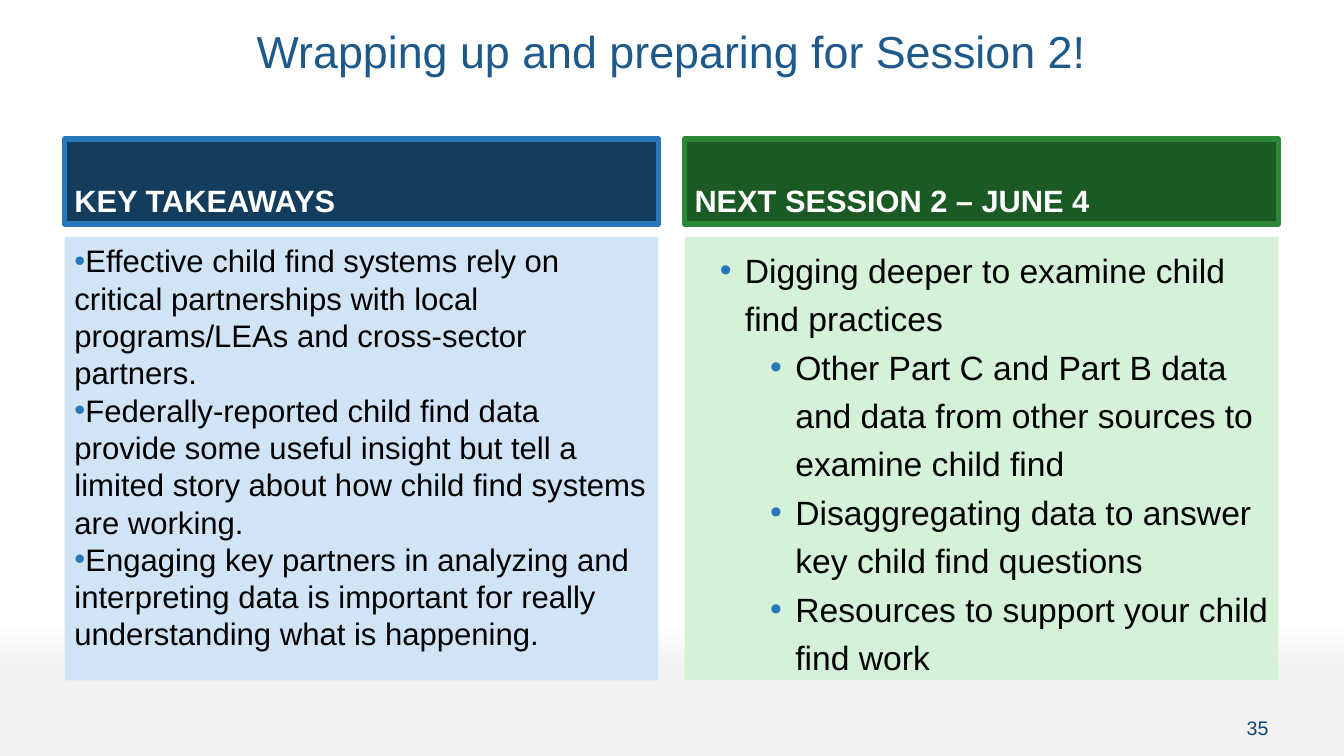
from dataclasses import dataclass

from lxml import etree
from pptx import Presentation
from pptx.dml.color import RGBColor
from pptx.enum.shapes import MSO_SHAPE
from pptx.enum.text import MSO_ANCHOR, PP_ALIGN
from pptx.oxml.ns import qn
from pptx.util import Inches, Pt

RECT = MSO_SHAPE.RECTANGLE
TOP, MIDDLE, BOTTOM = MSO_ANCHOR.TOP, MSO_ANCHOR.MIDDLE, MSO_ANCHOR.BOTTOM
LEFT, CENTER, RIGHT = PP_ALIGN.LEFT, PP_ALIGN.CENTER, PP_ALIGN.RIGHT

FONT = "Arial"
COLORS = {
    "white": "FFFFFF", "black": "000000", "gray": "F2F2F2",
    "title": "1D598B", "number": "104578", "bullet": "2777B9",
    "navy": "133C5D", "blue": "2777B9", "pale_blue": "D0E4F5",
    "forest": "1C5A25", "green": "2A8837", "pale_green": "D5F2D9",
}
MARGIN, PANEL_W, PANEL_GAP = 0.64, 5.89, 0.26
HEAD_TOP, HEAD_H = 1.38, 0.84
BODY_TOP, BODY_H = 2.35, 4.4


@dataclass
class Bullet:
    text: str
    indent: float = 0


@dataclass
class Panel:
    heading: str
    head_fill: str
    border: str
    body_fill: str
    size: float
    spacing: float
    bullets: list[Bullet]


PANELS = [
    Panel("KEY TAKEAWAYS", "navy", "blue", "pale_blue", 22.2, 1, [
        Bullet("Effective child find systems rely on critical partnerships with "
               "local programs/LEAs and cross-sector partners."),
        Bullet("Federally-reported child find data provide some useful insight but "
               "tell a limited story about how child find systems are working."),
        Bullet("Engaging key partners in analyzing and interpreting data is "
               "important for really understanding what is happening."),
    ]),
    Panel("NEXT SESSION 2 – JUNE 4", "forest", "green", "pale_green", 24, 1.2, [
        Bullet("Digging deeper to examine child find practices", 0.5),
        Bullet("Other Part C and Part B data and data from other sources to "
               "examine child find", 1),
        Bullet("Disaggregating data to answer key child find questions", 1),
        Bullet("Resources to support your child find work", 1),
    ]),
]


def rgb(name: str) -> RGBColor:
    return RGBColor.from_string(COLORS[name])


def set_text(sp, lines: list[str], size: float, color: str, align=LEFT,
             anchor=TOP, spacing: float = 1, bold: bool = False) -> None:
    tf = sp.text_frame
    tf.word_wrap = True
    tf.vertical_anchor = anchor
    tf.text = "\n".join(lines)
    for p in tf.paragraphs:
        p.alignment = align
        p.line_spacing = spacing
        font = p.runs[0].font
        font.name, font.size, font.bold = FONT, Pt(size), bold
        font.color.rgb = rgb(color)


def add_label(s, box: tuple, text: str, size: float, color: str, **style) -> None:
    sp = s.shapes.add_textbox(*map(Inches, box))
    set_text(sp, [text], size, color, **style)


def add_box(s, x: float, y: float, h: float, fill: str):
    sp = s.shapes.add_shape(RECT, *map(Inches, (x, y, PANEL_W, h)))
    sp.shadow.inherit = False
    sp.fill.solid()
    sp.fill.fore_color.rgb = rgb(fill)
    sp.line.fill.background()
    return sp


def add_bullet(p, indent: float) -> None:
    pPr = p._p.get_or_add_pPr()
    pPr.set("marL", str(Inches(indent)))
    pPr.set("indent", str(Inches(-0.25)))
    color = etree.SubElement(pPr, qn("a:buClr"))
    etree.SubElement(color, qn("a:srgbClr"), val=COLORS["bullet"])
    etree.SubElement(pPr, qn("a:buFont"), typeface=FONT)
    etree.SubElement(pPr, qn("a:buChar"), char="•")


def add_panel(s, x: float, panel: Panel) -> None:
    head = add_box(s, x, HEAD_TOP, HEAD_H, panel.head_fill)
    head.line.color.rgb = rgb(panel.border)
    head.line.width = Pt(4)
    etree.SubElement(head.line._ln, qn("a:round"))
    set_text(head, [panel.heading], 22, "white", anchor=BOTTOM, bold=True)

    body = add_box(s, x, BODY_TOP, BODY_H, panel.body_fill)
    set_text(body, [b.text for b in panel.bullets], panel.size, "black",
             spacing=panel.spacing)
    for p, bullet in zip(body.text_frame.paragraphs, panel.bullets):
        add_bullet(p, bullet.indent)


def main() -> None:
    prs = Presentation()
    prs.slide_width, prs.slide_height = Inches(13.33), Inches(7.5)
    s = prs.slides.add_slide(prs.slide_layouts[6])

    # Background fading to gray at the foot
    fill = s.background.fill
    fill.gradient()
    fill.gradient_angle = 270
    for stop, position, color in zip(fill.gradient_stops, (0.82, 0.89),
                                     ("white", "gray")):
        stop.position = position
        stop.color.rgb = rgb(color)

    # Title and slide number
    add_label(s, (MARGIN, 0.25, 12.04, 1), "Wrapping up and preparing for Session 2!",
              32, "title", align=CENTER, spacing=0.9)
    add_label(s, (11.33, 6.94, 1.35, 0.55), "35", 14, "number",
              align=RIGHT, anchor=MIDDLE)

    # Two panels side by side
    for i, panel in enumerate(PANELS):
        add_panel(s, MARGIN + i * (PANEL_W + PANEL_GAP), panel)

    prs.save("out.pptx")


if __name__ == "__main__":
    main()
